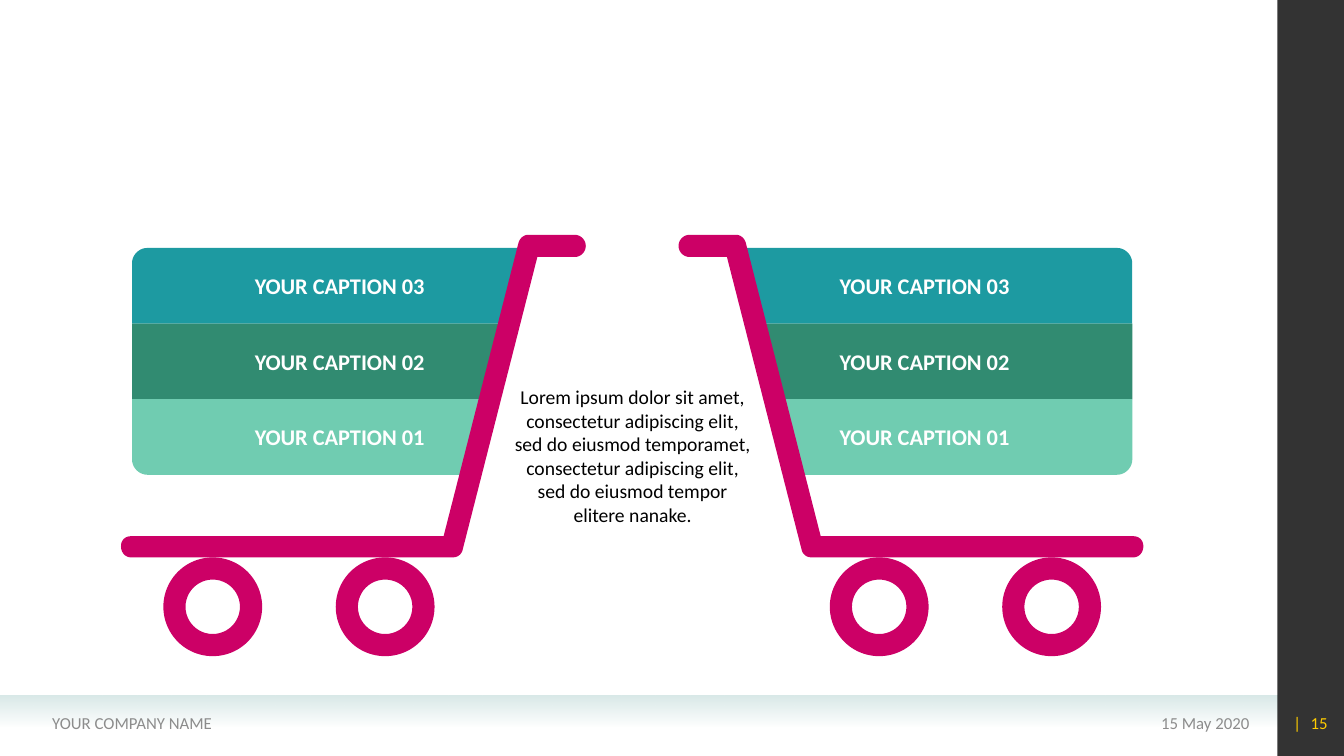
from pptx import Presentation
from pptx.dml.color import RGBColor
from pptx.enum.shapes import MSO_SHAPE as Shape
from pptx.enum.text import MSO_ANCHOR as Anchor, PP_ALIGN as Align
from pptx.oxml import parse_xml
from pptx.oxml.ns import nsdecls, qn
from pptx.util import Inches, Pt

TEAL = RGBColor(0x1D, 0x9A, 0xA1)
GREEN = RGBColor(0x31, 0x8B, 0x71)
MINT = RGBColor(0x70, 0xCC, 0xB1)
MAGENTA = RGBColor(0xCC, 0x00, 0x66)
PALE = RGBColor(0xD9, 0xE9, 0xE8)
GREY = RGBColor(0x8C, 0x8C, 0x8C)
YELLOW = RGBColor(0xFF, 0xCC, 0x00)
WHITE = RGBColor(0xFF, 0xFF, 0xFF)
BLACK = RGBColor(0x00, 0x00, 0x00)

FONT = "Calibri"
BODY = ("Lorem ipsum dolor sit amet, consectetur adipiscing elit, sed do eiusmod "
        "temporamet, consectetur adipiscing elit, sed do eiusmod tempor elitere nanake.")

MIRROR_SUM = 12.54
BAND_TOP, BAND_HEIGHT = 2.46, 0.75
BAND_LEFT, BAND_RIGHT, BAND_SLANT = 1.31, 5.24, 0.22
CORNER, CORNER_PULL = 0.15, 0.07
CAPTION_WIDTH, CAPTION_HEIGHT = 1.97, 0.37
CAPTION_LEFTS = [(2.34, Align.RIGHT), (8.23, Align.LEFT)]
WHEEL_CENTERS, WHEEL_TOP, WHEEL_SIZE, WHEEL_RIM = (2.11, 3.82), 5.53, 0.98, 0.22

BANDS = [
    ("YOUR CAPTION 03", TEAL, "top"),
    ("YOUR CAPTION 02", GREEN, None),
    ("YOUR CAPTION 01", MINT, "bottom"),
]

# Two numbers are a straight step; six numbers are a curve.
FRAME = [
    (1.3, 5.53), (4.49, 5.53), (4.54, 5.53, 4.58, 5.5, 4.59, 5.45),
    (5.33, 2.55), (5.7, 2.55), (5.76, 2.55, 5.81, 2.5, 5.81, 2.44),
    (5.81, 2.38, 5.76, 2.33, 5.7, 2.33), (5.24, 2.33),
    (5.19, 2.33, 5.15, 2.37, 5.14, 2.42), (4.4, 5.32), (1.3, 5.32),
    (1.24, 5.32, 1.2, 5.36, 1.2, 5.42), (1.2, 5.48, 1.24, 5.53, 1.3, 5.53),
]


def band_outline(row, rounded):
    top = BAND_TOP + row * BAND_HEIGHT
    bottom = top + BAND_HEIGHT
    left, inner = BAND_LEFT, BAND_LEFT + CORNER
    right = BAND_RIGHT - row * BAND_SLANT
    outline = [(right, top), (right - BAND_SLANT, bottom)]
    if rounded == "bottom":
        outline += [(inner, bottom), (inner - CORNER_PULL - 0.01, bottom, left,
                    bottom - CORNER_PULL, left, bottom - CORNER)]
    else:
        outline.append((left, bottom))
    if rounded == "top":
        outline += [(left, top + CORNER), (left, top + CORNER_PULL,
                    inner - CORNER_PULL - 0.01, top, inner, top)]
    else:
        outline.append((left, top))
    return outline


def flatten(outline, steps=10):
    points = []
    for part in outline:
        if len(part) == 2:
            points.append(part)
            continue
        controls = [points[-1], part[:2], part[2:4], part[4:]]
        for step in range(1, steps + 1):
            t = step / steps
            weights = ((1 - t) ** 3, 3 * t * (1 - t) ** 2, 3 * t * t * (1 - t), t ** 3)
            points.append(tuple(sum(w * c[axis] for w, c in zip(weights, controls))
                                for axis in (0, 1)))
    return points


def finish(shape, color):
    shape.shadow.inherit = False
    shape.fill.solid()
    shape.fill.fore_color.rgb = color
    shape.line.fill.background()


def add_outline(page, outline, color, mirrored):
    points = [(Inches(MIRROR_SUM - x if mirrored else x), Inches(y))
              for x, y in flatten(outline)]
    builder = page.shapes.build_freeform(*points[0])
    builder.add_line_segments(points[1:], close=True)
    finish(builder.convert_to_shape(), color)


def add_preset(page, kind, left, top, width, height, color):
    shape = page.shapes.add_shape(kind, *map(Inches, (left, top, width, height)))
    finish(shape, color)
    return shape


def set_alpha(color_element, percent):
    color_element.append(parse_xml(f'<a:alpha {nsdecls("a")} val="{percent * 1000}"/>'))


def add_text(page, text, left, top, width, height, size, color,
             align=Align.LEFT, bold=False, anchor=Anchor.MIDDLE):
    box = page.shapes.add_textbox(*map(Inches, (left, top, width, height)))
    frame = box.text_frame
    frame.word_wrap = True
    frame.vertical_anchor = anchor
    para = frame.paragraphs[0]
    para.text = text
    para.alignment = align
    para.font.name = FONT
    para.font.size = Pt(size)
    para.font.bold = bold
    para.font.color.rgb = color
    return frame


def add_footer(page):
    strip = add_preset(page, Shape.RECTANGLE, 0, 6.9, 12.67, 0.31, PALE)
    strip.fill.gradient()
    strip.fill.gradient_angle = 270
    for stop in strip.fill.gradient_stops:
        stop.color.rgb = PALE
    set_alpha(list(strip.element.iter(qn("a:srgbClr")))[-1], 0)

    sidebar = add_preset(page, Shape.RECTANGLE, 12.67, 0, 0.67, 7.5, BLACK)
    set_alpha(next(sidebar.element.iter(qn("a:srgbClr"))), 80)

    add_text(page, "15 May 2020", 9.1, 6.97, 3.39, 0.4, 12, GREY, Align.RIGHT)
    add_text(page, "YOUR COMPANY NAME", 0.42, 6.97, 4.9, 0.4, 12, GREY)
    number = add_text(page, "|\t15", 12.73, 6.97, 0.6, 0.4, 12, YELLOW)
    number.margin_right = 0
    stops = f'<a:tabLst {nsdecls("a")}><a:tab pos="{Inches(0.17)}" algn="l"/></a:tabLst>'
    next(number.paragraphs[0]._p.iter(qn("a:pPr"))).insert(0, parse_xml(stops))


def add_cart(page, mirrored):
    for row, (_, color, rounded) in enumerate(BANDS):
        add_outline(page, band_outline(row, rounded), color, mirrored)
    add_outline(page, FRAME, MAGENTA, mirrored)
    for center in WHEEL_CENTERS:
        middle = MIRROR_SUM - center if mirrored else center
        wheel = add_preset(page, Shape.DONUT, middle - WHEEL_SIZE / 2, WHEEL_TOP,
                           WHEEL_SIZE, WHEEL_SIZE, MAGENTA)
        wheel.adjustments[0] = WHEEL_RIM / WHEEL_SIZE
    left, align = CAPTION_LEFTS[mirrored]
    for row, (caption, _, _) in enumerate(BANDS):
        top = BAND_TOP + row * BAND_HEIGHT + (BAND_HEIGHT - CAPTION_HEIGHT) / 2
        add_text(page, caption, left, top, CAPTION_WIDTH, CAPTION_HEIGHT,
                 16, WHITE, align, bold=True)


def main():
    deck = Presentation()
    deck.slide_width, deck.slide_height = Inches(13.33), Inches(7.5)
    page = deck.slides.add_slide(deck.slide_layouts[6])
    add_footer(page)
    for mirrored in (True, False):
        add_cart(page, mirrored)
    body = add_text(page, BODY, 5.05, 3.8, 2.45, 1.69, 14, BLACK,
                    Align.CENTER, anchor=Anchor.TOP)
    body.margin_left = body.margin_right = Inches(0.04)
    body.margin_top = body.margin_bottom = Inches(0.02)
    deck.save("out.pptx")


if __name__ == "__main__":
    main()
